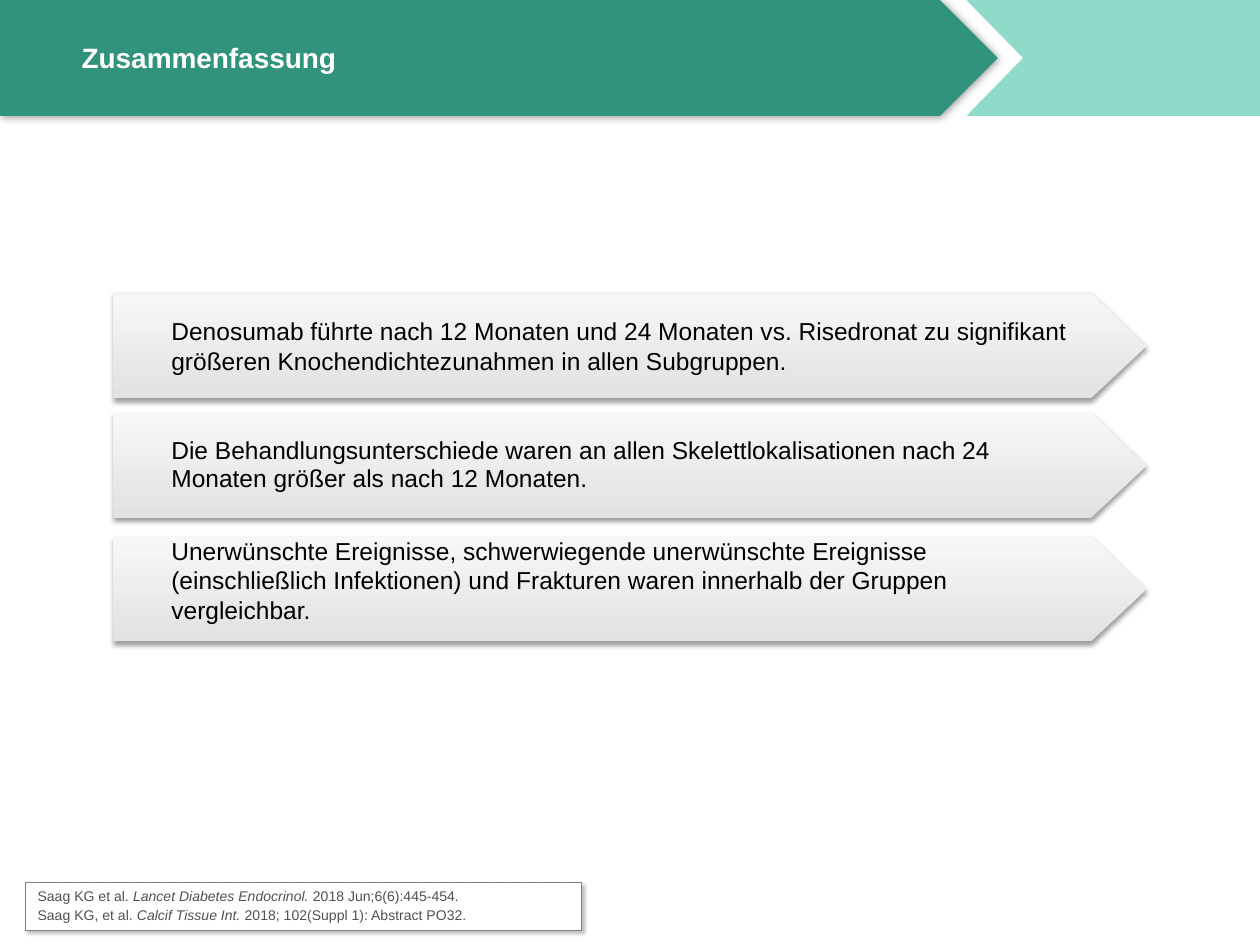
import pptx
import pptx.util
import pptx.dml.color
import pptx.enum.shapes
import pptx.enum.text
import pptx.oxml.ns
from lxml import etree

Inches, Pt = pptx.util.Inches, pptx.util.Pt
ANCHOR = pptx.enum.text.MSO_ANCHOR
SHAPE = pptx.enum.shapes.MSO_SHAPE

COLORS = {
    "header": "31937B", "header_tail": "8FDAC8", "white": "FFFFFF",
    "black": "000000", "reference": "515151", "border": "808080",
    "arrow_bottom": "E2E2E2", "arrow_top": "F7F7F7",
}
TITLE = "Zusammenfassung"
# text, arrow top, text top, line spacing, bottom inset
STATEMENTS = [
    ("Denosumab führte nach 12 Monaten und 24 Monaten vs. Risedronat zu signifikant "
     "größeren Knochendichtezunahmen in allen Subgruppen.", 2.33, 2.33, 1.0, 0.01),
    ("Die Behandlungsunterschiede waren an allen Skelettlokalisationen nach 24 "
     "Monaten größer als nach 12 Monaten.", 3.28, 3.28, 0.95, 0.01),
    ("Unerwünschte Ereignisse, schwerwiegende unerwünschte Ereignisse (einschließlich "
     "Infektionen) und Frakturen waren innerhalb der Gruppen vergleichbar.", 4.26, 4.3, 1.0, 0.23),
]
# plain start, italic journal, plain end
REFERENCES = [
    ("Saag KG et al. ", "Lancet Diabetes Endocrinol.", " 2018 Jun;6(6):445-454."),
    ("Saag KG, et al. ", "Calcif Tissue Int.", " 2018; 102(Suppl 1): Abstract PO32."),
]
HEADER_HEIGHT = 0.92
ARROW_LEFT, ARROW_SHOULDER, ARROW_TIP, ARROW_HEIGHT = 0.9, 8.66, 9.1, 0.83
TEXT_LEFT, TEXT_WIDTH = 1.32, 7.24


def rgb(name):
    return pptx.dml.color.RGBColor.from_string(COLORS[name])


def paint(shape, color=None):
    shape.shadow.inherit = False
    shape.line.fill.background()
    if color:
        shape.fill.solid()
        shape.fill.fore_color.rgb = rgb(color)


def add_shadow(shape, opacity, blur, distance, angle):
    """Opacity in percent, blur and distance in points, angle in degrees."""
    qn = pptx.oxml.ns.qn
    effects = shape._element.spPr.find(qn("a:effectLst"))
    shadow = etree.SubElement(
        effects, qn("a:outerShdw"), blurRad=str(Pt(blur)), dist=str(Pt(distance)),
        dir=str(angle * 60000), algn="ctr", rotWithShape="0")
    color = etree.SubElement(shadow, qn("a:srgbClr"), val=COLORS["black"])
    etree.SubElement(color, qn("a:alpha"), val=str(opacity * 1000))


def add_polygon(slide, points):
    builder = slide.shapes.build_freeform(*map(Inches, points[0]), scale=1.0)
    builder.add_line_segments([tuple(map(Inches, point)) for point in points[1:]], close=True)
    return builder.convert_to_shape()


def format_frame(shape, anchor, insets=(0.1, 0.05, 0.1, 0.05)):
    frame = shape.text_frame
    frame.word_wrap = True
    frame.vertical_anchor = anchor
    for side, inset in zip(("left", "top", "right", "bottom"), insets):
        setattr(frame, f"margin_{side}", Inches(inset))
    return frame


def add_run(paragraph, text, size, color, **styles):
    run = paragraph.add_run()
    run.text = text
    run.font.color.rgb = rgb(color)
    for name, value in {"name": "Arial", "size": Pt(size), **styles}.items():
        setattr(run.font, name, value)


def add_header(slide):
    middle = HEADER_HEIGHT / 2
    tail = add_polygon(slide, [(7.67, 0), (10, 0), (10, HEADER_HEIGHT),
                               (7.67, HEADER_HEIGHT), (8.12, middle)])
    paint(tail, "header_tail")
    banner = slide.shapes.add_shape(SHAPE.PENTAGON, 0, 0, Inches(7.92), Inches(HEADER_HEIGHT))
    paint(banner, "header")
    add_shadow(banner, 40, 5, 0, 0)
    title = slide.shapes.add_textbox(*map(Inches, (0.55, 0.12, 6.7, 0.67)))
    frame = format_frame(title, ANCHOR.MIDDLE)
    add_run(frame.paragraphs[0], TITLE, 16, "white", bold=True)


def add_statement(slide, text, top, text_top, line_spacing, bottom_inset):
    bottom = top + ARROW_HEIGHT
    arrow = add_polygon(slide, [
        (ARROW_LEFT, top), (ARROW_SHOULDER, top), (ARROW_TIP, (top + bottom) / 2),
        (ARROW_SHOULDER, bottom), (ARROW_LEFT, bottom)])
    paint(arrow)
    arrow.fill.gradient()
    arrow.fill.gradient_angle = 90
    for stop, color in zip(arrow.fill.gradient_stops, ("arrow_bottom", "arrow_top")):
        stop.color.rgb = rgb(color)
    add_shadow(arrow, 38, 3.1, 1.6, 90)
    box = slide.shapes.add_textbox(*map(Inches, (TEXT_LEFT, text_top, TEXT_WIDTH, ARROW_HEIGHT)))
    frame = format_frame(box, ANCHOR.MIDDLE, (0.04, 0.01, 0.01, bottom_inset))
    paragraph = frame.paragraphs[0]
    paragraph.line_spacing = line_spacing
    add_run(paragraph, text, 14, "black")


def add_references(slide):
    box = slide.shapes.add_shape(SHAPE.RECTANGLE, *map(Inches, (0.2, 7, 4.41, 0.38)))
    paint(box, "white")
    box.line.color.rgb = rgb("border")
    box.line.width = Pt(0.25)
    add_shadow(box, 25, 2, 2, 45)
    frame = format_frame(box, ANCHOR.BOTTOM)
    for index, parts in enumerate(REFERENCES):
        paragraph = frame.add_paragraph() if index else frame.paragraphs[0]
        paragraph.alignment = pptx.enum.text.PP_ALIGN.LEFT
        paragraph.line_spacing = 0.9
        if index:
            paragraph.space_before = Pt(2.4)
        for text, italic in zip(parts, (False, True, False)):
            add_run(paragraph, text, 8, "reference", italic=italic)


def main():
    presentation = pptx.Presentation()
    presentation.slide_width, presentation.slide_height = Inches(10), Inches(7.5)
    slide = presentation.slides.add_slide(presentation.slide_layouts[6])
    add_header(slide)
    for statement in STATEMENTS:
        add_statement(slide, *statement)
    add_references(slide)
    presentation.save("out.pptx")


if __name__ == "__main__":
    main()
